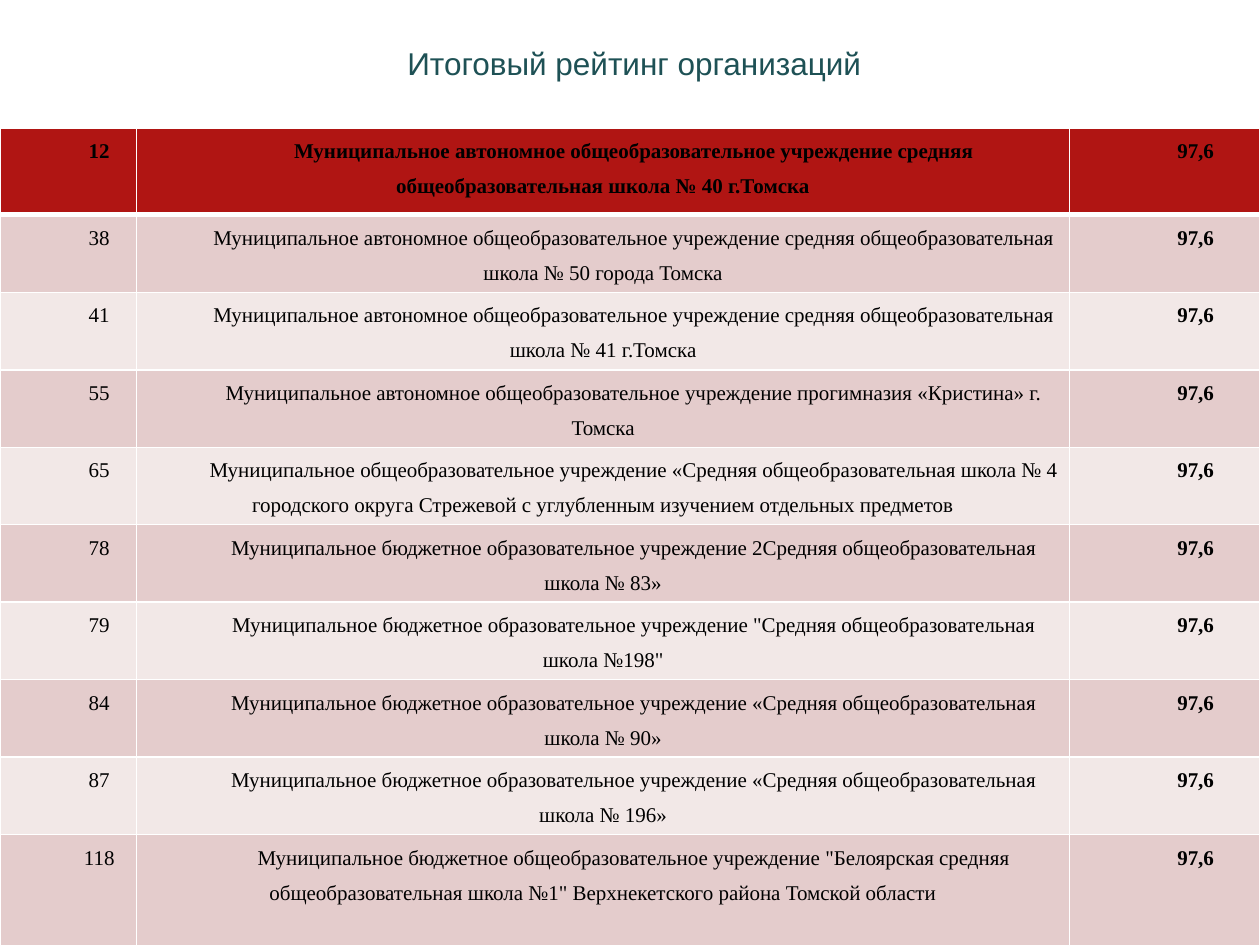
from dataclasses import dataclass

from lxml import etree
from pptx import Presentation
from pptx.dml.color import RGBColor
from pptx.enum import text
from pptx.oxml import ns
from pptx.util import Pt

PX = 914400 // 200  # 200 px to the inch

TEAL = RGBColor(0x1E, 0x51, 0x55)
BLACK = RGBColor(0x00, 0x00, 0x00)
WHITE = RGBColor(0xFF, 0xFF, 0xFF)
RED = RGBColor(0xB0, 0x15, 0x13)
BANDS = (RGBColor(0xE4, 0xCC, 0xCC), RGBColor(0xF2, 0xE8, 0xE7))

COLUMN_WIDTHS = (217, 1481, 302)
FIRST_HEIGHT, ROW_HEIGHT, LAST_HEIGHT = 137, 123, 206
TABLE_TOP = 204
CELL_MARGIN = 14
FIRST_LINE_INDENT = 98


@dataclass(frozen=True)
class School:
    place: str
    name: str
    score: str = "97,6"


SCHOOLS = (
    School("12", "Муниципальное автономное общеобразовательное учреждение средняя "
                 "общеобразовательная школа № 40 г.Томска"),
    School("38", "Муниципальное автономное общеобразовательное учреждение средняя "
                 "общеобразовательная школа № 50 города Томска"),
    School("41", "Муниципальное автономное общеобразовательное учреждение средняя "
                 "общеобразовательная школа № 41 г.Томска"),
    School("55", "Муниципальное автономное общеобразовательное учреждение прогимназия "
                 "«Кристина» г. Томска"),
    School("65", "Муниципальное общеобразовательное учреждение «Средняя общеобразовательная "
                 "школа № 4 городского округа Стрежевой с углубленным изучением отдельных "
                 "предметов"),
    School("78", "Муниципальное бюджетное образовательное учреждение 2Средняя "
                 "общеобразовательная школа № 83»"),
    School("79", "Муниципальное бюджетное образовательное учреждение \"Средняя "
                 "общеобразовательная школа №198\""),
    School("84", "Муниципальное бюджетное образовательное учреждение «Средняя "
                 "общеобразовательная школа № 90»"),
    School("87", "Муниципальное бюджетное образовательное учреждение «Средняя "
                 "общеобразовательная школа № 196»"),
    School("118", "Муниципальное бюджетное общеобразовательное учреждение \"Белоярская средняя "
                  "общеобразовательная школа №1\" Верхнекетского района Томской области"),
)


def style_paragraph(para, font_name: str, size: int, color: RGBColor, bold: bool) -> None:
    para.alignment = text.PP_ALIGN.CENTER
    para.font.name = font_name
    para.font.size = Pt(size)
    para.font.color.rgb = color
    para.font.bold = bold


def set_borders(cell, top: int, bottom: int) -> None:
    """Draw white borders, with widths in points."""
    properties = cell._tc.get_or_add_tcPr()
    for tag, width in (("a:lnL", 1), ("a:lnR", 1), ("a:lnT", top), ("a:lnB", bottom)):
        line = etree.SubElement(properties, ns.qn(tag), w=str(Pt(width)))
        fill = etree.SubElement(line, ns.qn("a:solidFill"))
        etree.SubElement(fill, ns.qn("a:srgbClr"), val=str(WHITE))


def fill_cell(cell, words: str, row: int, bold: bool) -> None:
    set_borders(cell, top=3 if row == 1 else 1, bottom=3 if row == 0 else 1)
    cell.fill.solid()
    cell.fill.fore_color.rgb = BANDS[(row - 1) % 2] if row else RED
    cell.margin_left = cell.margin_right = CELL_MARGIN * PX
    cell.margin_top = cell.margin_bottom = 0
    cell.text = words
    para = cell.text_frame.paragraphs[0]
    properties = para._p.get_or_add_pPr()
    properties.set("marL", "0")
    properties.set("indent", str(FIRST_LINE_INDENT * PX))
    para.line_spacing = 1.5
    style_paragraph(para, "Times New Roman", 12, BLACK, bold)


def add_title(page, words: str) -> None:
    box = page.shapes.add_textbox(107 * PX, 60 * PX, 1800 * PX, 80 * PX)
    box.text_frame.word_wrap = True
    box.text_frame.text = words
    style_paragraph(box.text_frame.paragraphs[0], "Arial", 18, TEAL, False)


def add_rating(page, schools: tuple[School, ...]) -> None:
    heights = [FIRST_HEIGHT] + [ROW_HEIGHT] * (len(schools) - 2) + [LAST_HEIGHT]
    table = page.shapes.add_table(
        len(schools), len(COLUMN_WIDTHS), 0, TABLE_TOP * PX,
        sum(COLUMN_WIDTHS) * PX, sum(heights) * PX).table
    for column, width in zip(table.columns, COLUMN_WIDTHS):
        column.width = width * PX
    for row, (school, height) in enumerate(zip(schools, heights)):
        table.rows[row].height = height * PX
        for column, words in enumerate((school.place, school.name, school.score)):
            fill_cell(table.cell(row, column), words, row, bold=row == 0 or column == 2)


def main() -> None:
    deck = Presentation()
    deck.slide_width, deck.slide_height = 2000 * PX, 1500 * PX
    page = deck.slides.add_slide(deck.slide_layouts[6])

    # Heading
    add_title(page, "Итоговый рейтинг организаций")

    # Rating table
    add_rating(page, SCHOOLS)

    deck.save("out.pptx")


if __name__ == "__main__":
    main()
